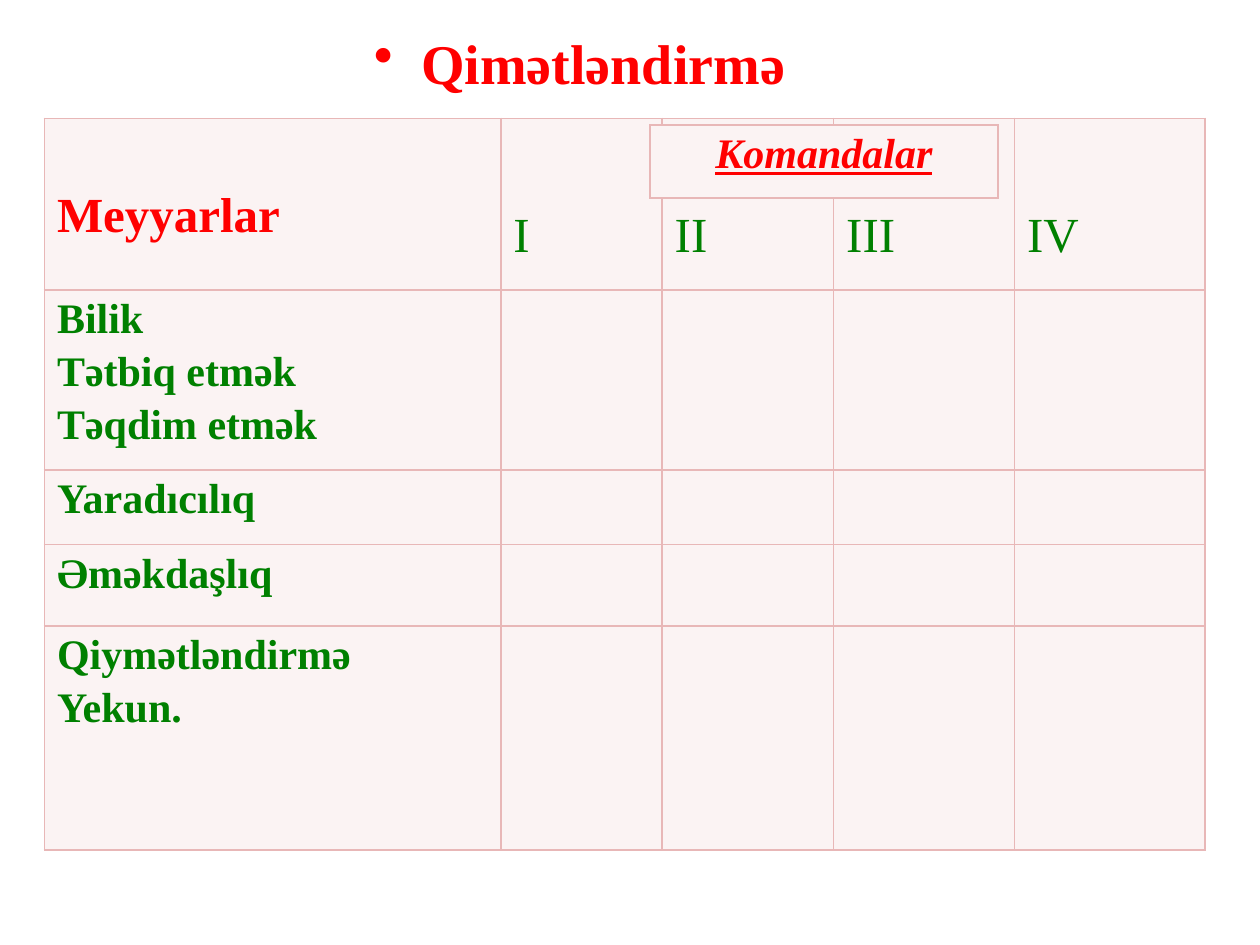
from dataclasses import dataclass

from lxml import etree
from pptx import Presentation
from pptx.dml.color import RGBColor
from pptx.enum.text import MSO_ANCHOR, PP_ALIGN
from pptx.oxml.ns import qn
from pptx.util import Pt

CENTER, LEFT = PP_ALIGN.CENTER, PP_ALIGN.LEFT
TOP, MIDDLE = MSO_ANCHOR.TOP, MSO_ANCHOR.MIDDLE


@dataclass(frozen=True)
class Theme:
    font: str = "Times New Roman"
    red: str = "FF0000"
    green: str = "008000"
    cell: str = "FBF3F3"
    border: str = "E8B7B7"
    title_size: float = 32
    header_size: float = 28
    body_size: float = 24
    paragraph_gap: float = 3.8
    border_width: float = 1


class SlideBuilder:
    def __init__(self, slide, theme):
        self.slide = slide
        self.theme = theme

    def format_text(self, text_frame, size, color, bold=True, italic=False,
                    underline=False, align=LEFT):
        for index, paragraph in enumerate(text_frame.paragraphs):
            paragraph.alignment = align
            if index:
                paragraph.space_before = Pt(self.theme.paragraph_gap)
            for run in paragraph.runs:
                font = run.font
                font.name, font.size = self.theme.font, Pt(size)
                font.bold, font.italic, font.underline = bold, italic, underline
                font.color.rgb = RGBColor.from_string(color)

    def bullet_text(self, text, left, top, width, height, indent):
        shape = self.slide.shapes.add_textbox(Pt(left), Pt(top), Pt(width), Pt(height))
        text_frame = shape.text_frame
        text_frame.word_wrap = True
        text_frame.text = text
        properties = text_frame.paragraphs[0]._p.get_or_add_pPr()
        properties.set("marL", str(Pt(indent)))
        properties.set("indent", str(-Pt(indent)))
        etree.SubElement(properties, qn("a:buChar"), char="•")
        self.format_text(text_frame, self.theme.title_size, self.theme.red)

    def style_cell(self, cell):
        properties = cell._tc.get_or_add_tcPr()
        for side in ("a:lnL", "a:lnR", "a:lnT", "a:lnB"):
            line = etree.SubElement(properties, qn(side), w=str(Pt(self.theme.border_width)))
            fill = etree.SubElement(line, qn("a:solidFill"))
            etree.SubElement(fill, qn("a:srgbClr"), val=self.theme.border)
        cell.fill.solid()
        cell.fill.fore_color.rgb = RGBColor.from_string(self.theme.cell)

    def table(self, left, top, widths, heights):
        frame = self.slide.shapes.add_table(
            len(heights), len(widths), Pt(left), Pt(top), Pt(sum(widths)), Pt(sum(heights)))
        table = frame.table
        table.first_row = table.horz_banding = False
        for column, width in zip(table.columns, widths):
            column.width = Pt(width)
        for row, height in zip(table.rows, heights):
            row.height = Pt(height)
        for cell in table.iter_cells():
            self.style_cell(cell)
        return table

    def cell_text(self, cell, text, size, color, anchor=TOP, margin_top=3.6, **style):
        cell.text_frame.text = text
        cell.vertical_anchor = anchor
        cell.margin_top = Pt(margin_top)
        self.format_text(cell.text_frame, size, color, **style)


def main():
    theme = Theme()
    presentation = Presentation()
    presentation.slide_width, presentation.slide_height = Pt(720), Pt(540)
    slide = presentation.slides.add_slide(presentation.slide_layouts[6])
    builder = SlideBuilder(slide, theme)

    # Title
    builder.bullet_text("Qimətləndirmə", 206.6, 13, 294.5, 67, indent=27)

    # Assessment grid: criteria down, teams across
    grid = builder.table(25.4, 67.6, [260.8, 92.2, 98, 103.4, 108.8],
                         [98, 103, 42.5, 46.6, 128])
    header_margin = 40
    builder.cell_text(grid.cell(0, 0), "Meyyarlar", theme.header_size, theme.red,
                      margin_top=header_margin)
    for column, team in enumerate(("I", "II", "III", "IV"), start=1):
        builder.cell_text(grid.cell(0, column), team, theme.header_size, theme.green,
                          anchor=MIDDLE, margin_top=header_margin, bold=False)
    criteria = ("Bilik\nTətbiq etmək\nTəqdim etmək", "Yaradıcılıq", "Əməkdaşlıq",
                "Qiymətləndirmə\nYekun.")
    for row, criterion in enumerate(criteria, start=1):
        builder.cell_text(grid.cell(row, 0), criterion, theme.body_size, theme.green)

    # Heading over the team columns
    heading = builder.table(371.5, 71.4, [198.7], [41.8])
    builder.cell_text(heading.cell(0, 0), "Komandalar", theme.body_size, theme.red,
                      italic=True, underline=True, align=CENTER)

    presentation.save("out.pptx")


if __name__ == "__main__":
    main()
